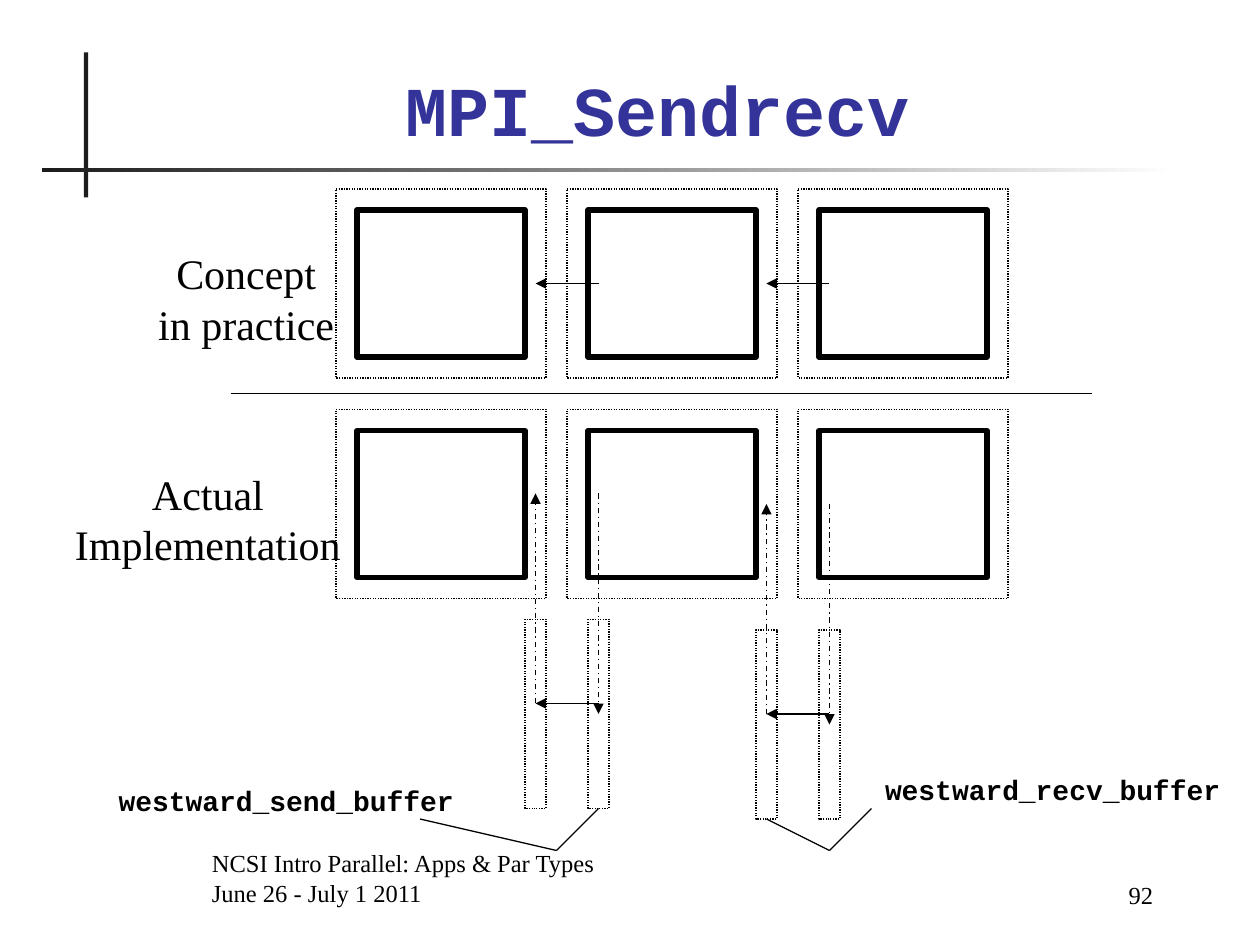
from lxml import etree
from pptx import Presentation
from pptx.dml.color import RGBColor
from pptx.enum.dml import MSO_LINE
from pptx.enum.shapes import MSO_CONNECTOR, MSO_SHAPE
from pptx.enum.text import MSO_ANCHOR, PP_ALIGN
from pptx.oxml.ns import qn
from pptx.util import Inches, Pt

BLACK = RGBColor(0x00, 0x00, 0x00)
WHITE = RGBColor(0xFF, 0xFF, 0xFF)
CHARCOAL = RGBColor(0x1C, 0x1C, 0x1C)
INDIGO = RGBColor(0x33, 0x33, 0x99)
SERIF, MONO = "Times New Roman", "Courier New"
BOTTOM_SIDE = 2

# Positions are columns and rows of a 120 x 90 grid over the slide.
COLUMNS, ROWS = 120, 90
TITLE = "MPI_Sendrecv"
ROW_LABELS = [
    (["Concept", "in practice"], (13.8, 23, 19.3, 11)),
    (["Actual", "Implementation"], (5.8, 44, 28, 11)),
]
BUFFER_LABELS = [
    ("westward_send_buffer", (10, 74, 34.5, 4.4)),
    ("westward_recv_buffer", (83, 73, 34.5, 4.4)),
]
FOOTER = ["NCSI Intro Parallel: Apps & Par Types", "June 26 - July 1 2011"]
PAGE = "92"

PROCESS_COLUMNS = (32, 54, 76)
CONCEPT_ROW, ACTUAL_ROW = 18, 39
HALO_WIDTH, HALO_HEIGHT, HALO_MARGIN = 20, 18, 2
BUFFER_WIDTH, BUFFER_HEIGHT = 2, 18
BUFFER_ROWS = (59, 60)          # one per neighbouring pair of processes
CALLOUT_ROW = 81

deck = Presentation()
deck.slide_width, deck.slide_height = Inches(10), Inches(7.5)
slide = deck.slides.add_slide(deck.slide_layouts[5])
shapes = slide.shapes


def across(columns):
    return round(deck.slide_width * columns / COLUMNS)


def down(rows):
    return round(deck.slide_height * rows / ROWS)


def grid_box(left, top, width, height):
    return across(left), down(top), across(width), down(height)


def add_box(box, weight=0.75, dash=None):
    outline = shapes.add_shape(MSO_SHAPE.RECTANGLE, *grid_box(*box))
    outline.shadow.inherit = False
    outline.fill.background()
    outline.line.color.rgb = BLACK
    outline.line.width = Pt(weight)
    if dash:
        outline.line.dash_style = dash
    return outline


def add_bar(box):
    bar = shapes.add_shape(MSO_SHAPE.RECTANGLE, *grid_box(*box))
    bar.shadow.inherit = False
    bar.line.fill.background()
    bar.fill.solid()
    bar.fill.fore_color.rgb = CHARCOAL
    return bar


def add_line(start, end, arrow=False, dash=None):
    line = shapes.add_connector(MSO_CONNECTOR.STRAIGHT, across(start[0]), down(start[1]),
                                across(end[0]), down(end[1]))
    line.line.color.rgb = BLACK
    line.line.width = Pt(0.75)
    if dash:
        line.line.dash_style = dash
    if arrow:
        etree.SubElement(line.line._get_or_add_ln(), qn("a:tailEnd"), type="triangle")
    etree.SubElement(line._element.spPr, qn("a:effectLst"))
    return line


def write(frame, lines, size, font=SERIF, bold=False, color=BLACK,
          align=PP_ALIGN.CENTER, anchor=MSO_ANCHOR.TOP, wrap=False):
    frame.word_wrap = wrap
    frame.vertical_anchor = anchor
    frame.text = "\n".join(lines)
    for paragraph in frame.paragraphs:
        paragraph.alignment = align
        paragraph.font.size = Pt(size)
        paragraph.font.name = font
        paragraph.font.bold = bold
        paragraph.font.color.rgb = color


def add_text(box, lines, size, **style):
    write(shapes.add_textbox(*grid_box(*box)).text_frame, lines, size, **style)


def add_process(left, top):
    """Draw a process domain inside its dotted halo of ghost cells."""
    add_box((left + HALO_MARGIN, top + HALO_MARGIN,
             HALO_WIDTH - 2 * HALO_MARGIN, HALO_HEIGHT - 2 * HALO_MARGIN), weight=3)
    add_box((left, top, HALO_WIDTH, HALO_HEIGHT), dash=MSO_LINE.ROUND_DOT)


def add_buffer(center, top):
    return add_box((center - BUFFER_WIDTH / 2, top, BUFFER_WIDTH, BUFFER_HEIGHT),
                   dash=MSO_LINE.ROUND_DOT)


# Title and its crossed rules
add_bar((8, 5, 0.4, 13.8))
rule = add_bar((4, 16, 108, 0.4))
rule.fill.gradient()
rule.fill.gradient_angle = 0
for stop, color in zip(rule.fill.gradient_stops, (CHARCOAL, WHITE)):
    stop.color.rgb = color
title = shapes.title
title.left, title.top, title.width, title.height = grid_box(10, 6, 105.2, 8.9)
write(title.text_frame, [TITLE], 40, font=MONO, bold=True, color=INDIGO,
      anchor=MSO_ANCHOR.BOTTOM, wrap=True)

# Processes
for row in (CONCEPT_ROW, ACTUAL_ROW):
    for column in PROCESS_COLUMNS:
        add_process(column, row)
add_line((22, 37.5), (104, 37.5))

# Messages from each process to its western neighbour
buffers = []
for west, east, top in zip(PROCESS_COLUMNS, PROCESS_COLUMNS[1:], BUFFER_ROWS):
    ghost, edge = west + HALO_WIDTH - 1, east + HALO_MARGIN + 1
    add_line((edge, CONCEPT_ROW + 9), (ghost, CONCEPT_ROW + 9), arrow=True)
    buffers.append((add_buffer(ghost, top), add_buffer(edge, top)))
    add_line((ghost, top + 8), (ghost, top - 12), arrow=True, dash=MSO_LINE.DASH_DOT)
    add_line((edge, top - 12), (edge, top + 9), arrow=True, dash=MSO_LINE.DASH_DOT)
    add_line((edge, top + 8), (ghost, top + 8), arrow=True)

# Callouts from the buffers to their names
send_buffer, recv_buffer = buffers[0][1], buffers[1][0]
for buffer, start, elbow, label_end in (
    (send_buffer, (57, 77), 53, (40, 78)),
    (recv_buffer, (73, 78), 79, (83, 77)),
):
    add_line(start, (elbow, CALLOUT_ROW)).begin_connect(buffer, BOTTOM_SIDE)
    add_line(label_end, (elbow, CALLOUT_ROW))

# Labels and footer
for lines, box in ROW_LABELS:
    add_text(box, lines, 24)
for name, box in BUFFER_LABELS:
    add_text(box, [name], 16, font=MONO, bold=True)
add_text((19, 81, 73, 6), FOOTER, 14, align=PP_ALIGN.LEFT,
         anchor=MSO_ANCHOR.BOTTOM, wrap=True)
add_text((94, 81.2, 17, 6), [PAGE], 14, align=PP_ALIGN.RIGHT,
         anchor=MSO_ANCHOR.BOTTOM, wrap=True)

deck.save("out.pptx")
